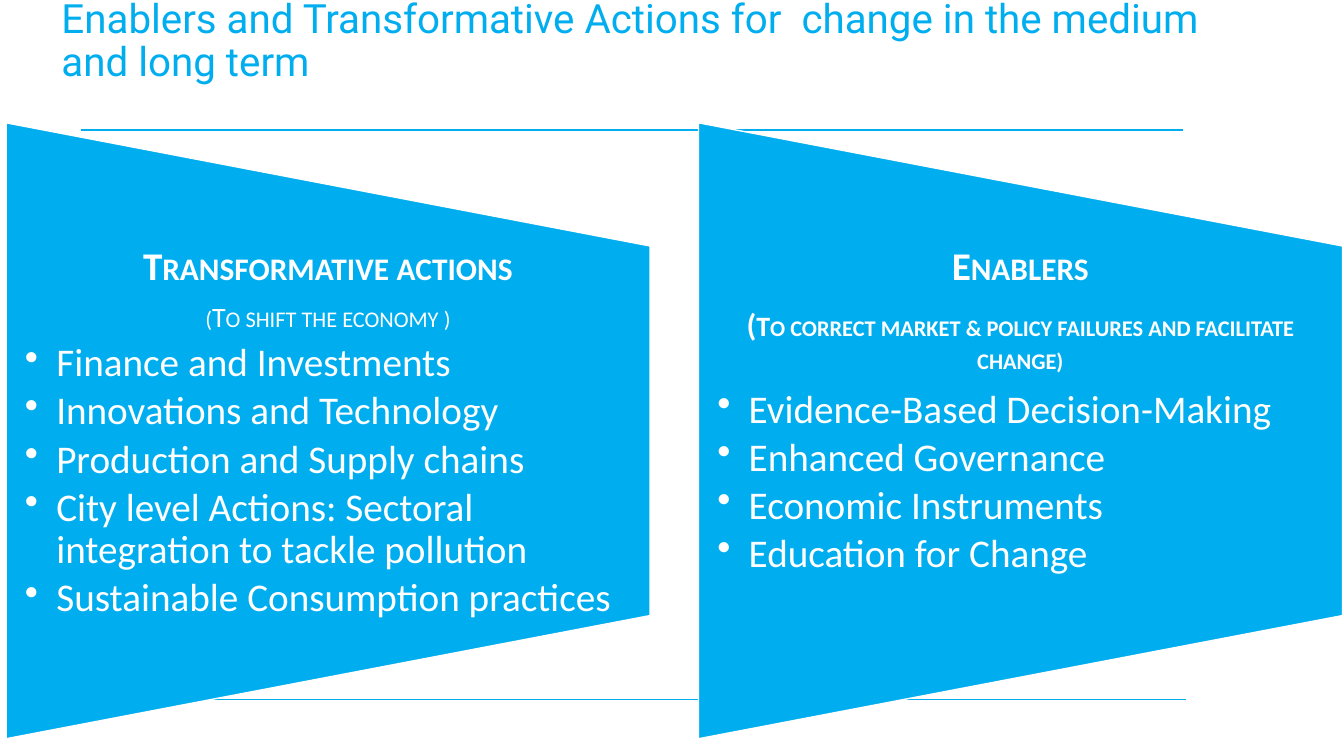
from pptx import Presentation
from pptx.dml.color import RGBColor
from pptx.enum.shapes import MSO_CONNECTOR, MSO_SHAPE
from pptx.enum.text import MSO_ANCHOR, PP_ALIGN
from pptx.oxml.ns import qn
from pptx.util import Cm, Pt
from lxml import etree

LINE = MSO_CONNECTOR.STRAIGHT
FLARE = MSO_SHAPE.FLOWCHART_MANUAL_OPERATION
CENTER = PP_ALIGN.CENTER
MIDDLE = MSO_ANCHOR.MIDDLE

BLUE, WHITE = "00AEEF", "FFFFFF"
TITLE = "Enablers and Transformative Actions for  change in the medium and long term"
BIG, SMALL = 28, 20

# Each heading is a list of (runs, bold); each run is (text, size).
PANELS = [
    (
        [
            ([("Transformative actions", BIG)], True),
            ([("(To shift the economy )", SMALL)], False),
        ],
        [
            "Finance and Investments",
            "Innovations and Technology",
            "Production and Supply chains",
            "City level Actions: Sectoral integration to tackle pollution",
            "Sustainable Consumption practices",
        ],
    ),
    (
        [
            ([("Enablers", BIG)], True),
            ([("(", BIG),
              ("To correct market & policy failures and facilitate change)", SMALL)], True),
        ],
        [
            "Evidence-Based Decision-Making",
            "Enhanced Governance",
            "Economic Instruments",
            "Education for Change",
        ],
    ),
]


def color(code):
    return RGBColor.from_string(code)


def style(para, face, size, code, bold=False):
    para.line_spacing = 0.9
    font = para.font
    font.name, font.size, font.bold = face, Pt(size), bold
    font.color.rgb = color(code)


def add_rule(slide, left, top):
    rule = slide.shapes.add_connector(LINE, Cm(left), Cm(top), Cm(left + 27.79), Cm(top))
    rule.line.color.rgb = color(BLUE)
    rule.line.width = Pt(1)
    etree.SubElement(rule._element.spPr, qn("a:effectLst"))


def add_box(slide, left, top, width, height):
    box = slide.shapes.add_textbox(Cm(left), Cm(top), Cm(width), Cm(height))
    box.text_frame.word_wrap = True
    return box.text_frame


def add_title(slide):
    frame = add_box(slide, 1.3, 0, 30.25, 2.11)
    frame.vertical_anchor = MIDDLE
    para = frame.paragraphs[0]
    para.text = TITLE
    style(para, "Roboto", 28.8, BLUE)


def add_flare(slide, left):
    """Draw the panel, turned so that its wide side is on the left."""
    flare = slide.shapes.add_shape(FLARE, Cm(left), Cm(2.74), Cm(15.52), Cm(16.23))
    flare.rotation = 270
    flare.shadow.inherit = False
    flare.fill.solid()
    flare.fill.fore_color.rgb = color(BLUE)
    flare.line.color.rgb = color(WHITE)
    flare.line.width = Pt(1)


def add_head(para, runs, bold):
    style(para, "Calibri", runs[-1][1], WHITE, bold)
    para.alignment = CENTER
    para.space_after = Pt(0.35 * runs[0][1])
    para.font._element.set("cap", "small")
    for text, size in runs:
        run = para.add_run()
        run.text = text
        if size != runs[-1][1]:
            run.font.size = Pt(size)


def add_bullet(para, text):
    para.text = text
    style(para, "Calibri", BIG, WHITE)
    para.space_after = Pt(0.15 * BIG)
    props = para._p.get_or_add_pPr()
    props.set("marL", str(Cm(0.79)))
    props.set("indent", str(-Cm(0.79)))
    mark = etree.Element(qn("a:buChar"), char="•")
    props.find(qn("a:defRPr")).addprevious(mark)


def add_panel(slide, left, heads, items):
    add_flare(slide, left + 0.36)
    frame = add_box(slide, left, 6.22, 16.23, 9.32)
    frame.margin_left = frame.margin_right = Cm(0.48)
    frame.margin_top = frame.margin_bottom = 0
    para = frame.paragraphs[0]
    for index, (runs, bold) in enumerate(heads):
        if index:
            para = frame.add_paragraph()
        add_head(para, runs, bold)
    for item in items:
        add_bullet(frame.add_paragraph(), item)


def main():
    deck = Presentation()
    deck.slide_width, deck.slide_height = Cm(33.87), Cm(19.05)
    slide = deck.slides.add_slide(deck.slide_layouts[6])
    add_rule(slide, 2.03, 3.28)
    add_rule(slide, 2.11, 17.63)
    add_title(slide)
    for index, (heads, items) in enumerate(PANELS):
        add_panel(slide, 0.15 + 17.45 * index, heads, items)
    deck.save("out.pptx")


if __name__ == "__main__":
    main()
